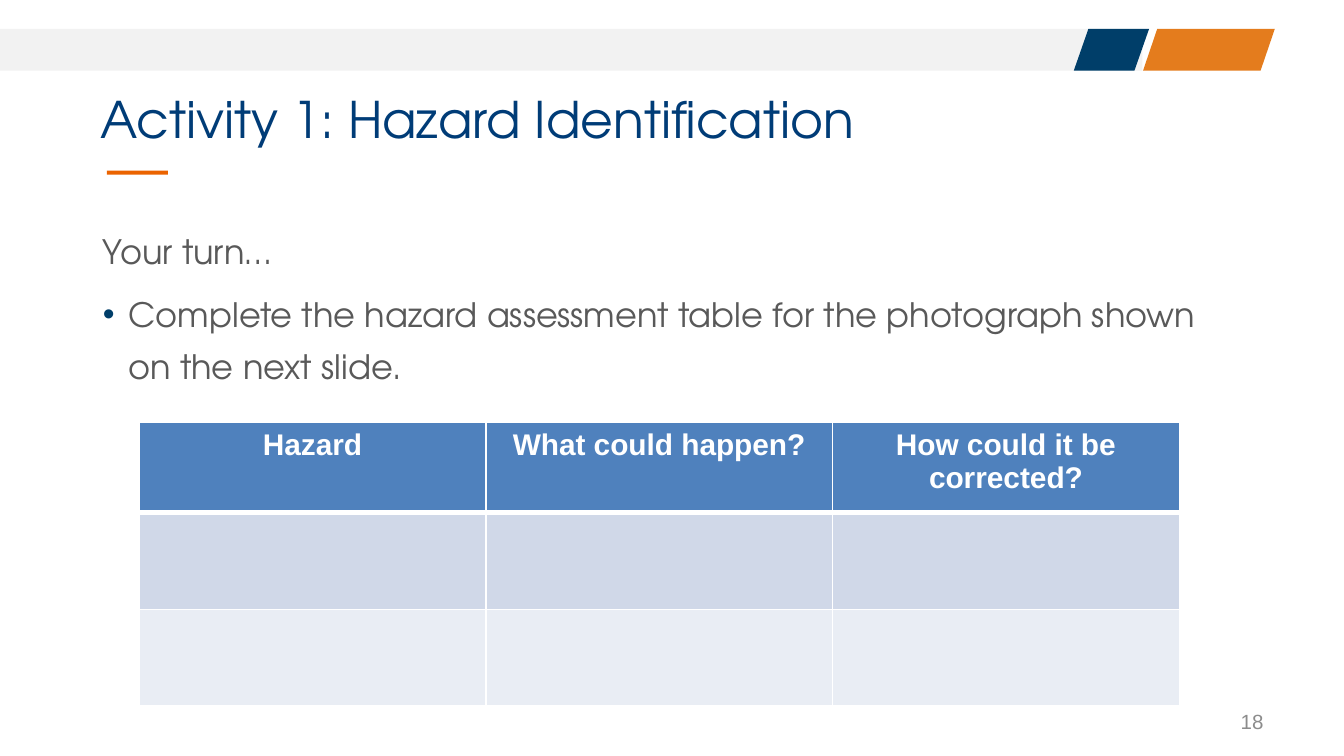
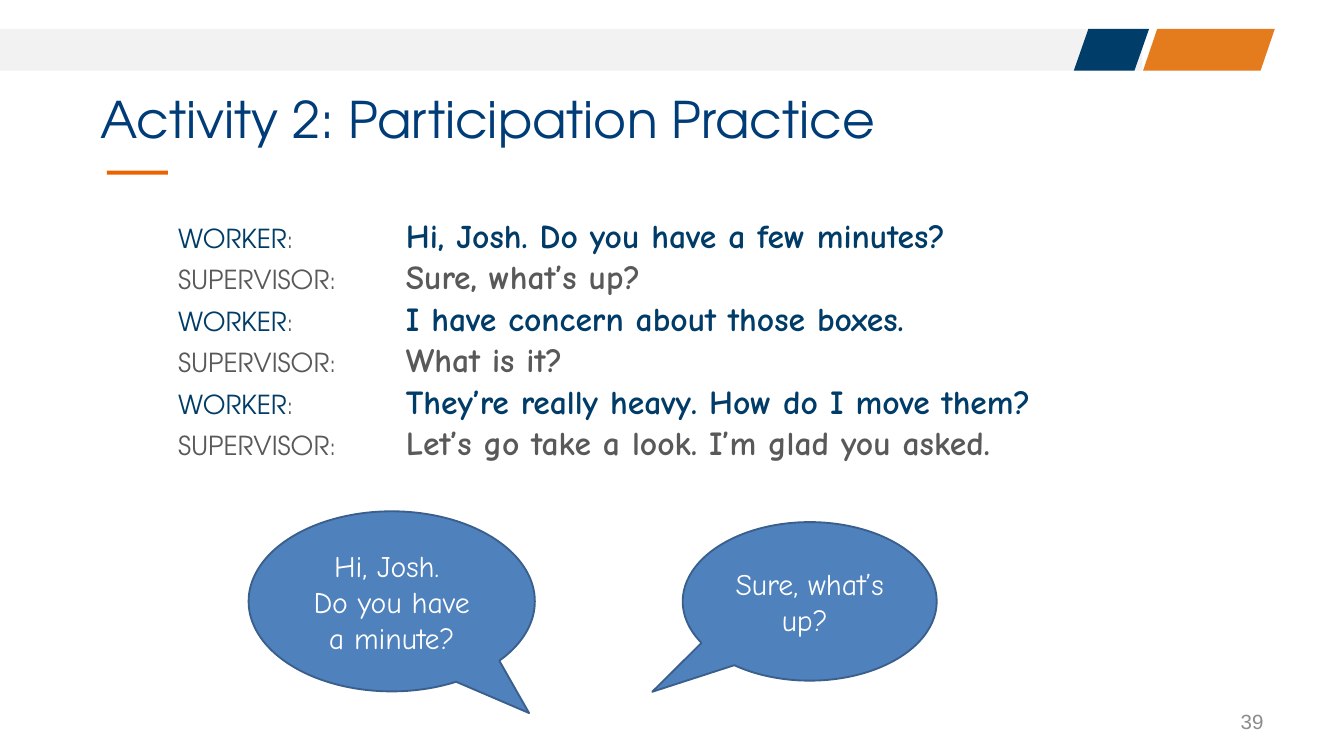
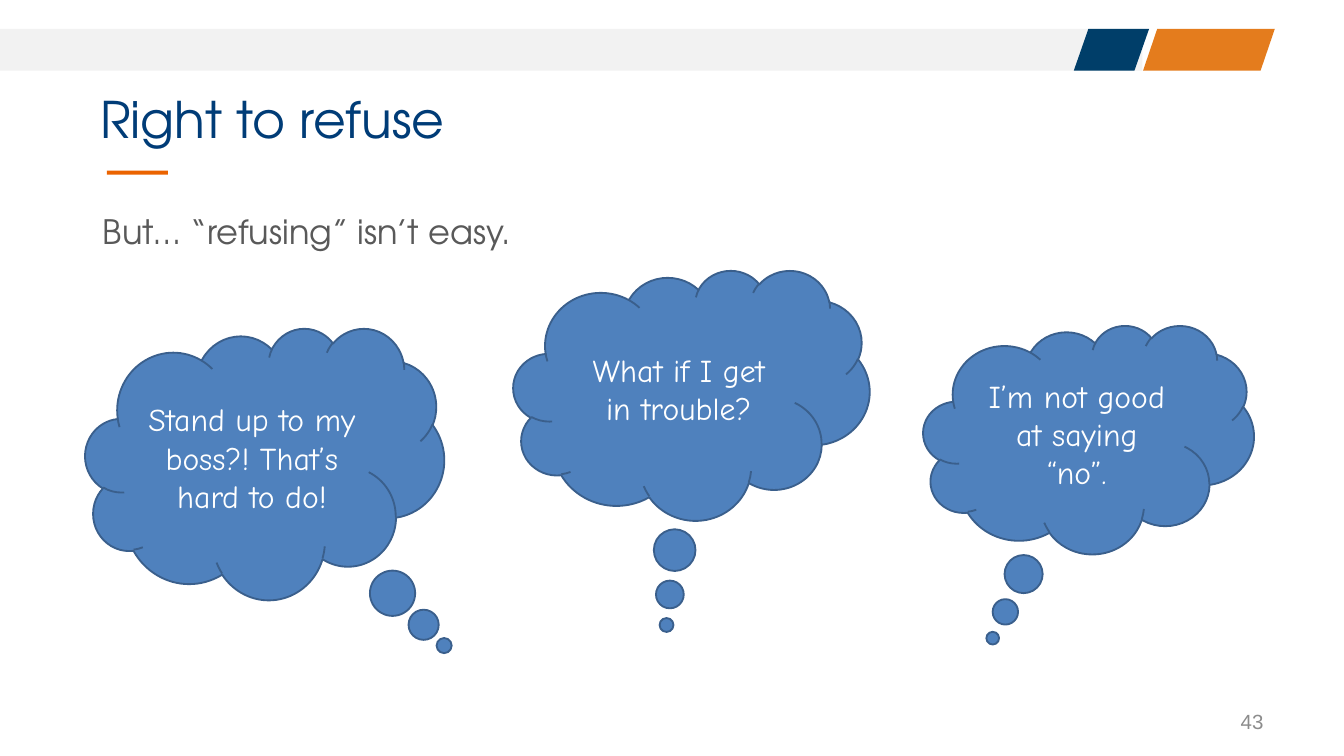
from dataclasses import dataclass

from lxml.etree import SubElement
from pptx import Presentation
from pptx.dml.color import RGBColor
from pptx.enum.shapes import MSO_SHAPE
from pptx.enum.text import MSO_ANCHOR, MSO_AUTO_SIZE, PP_ALIGN
from pptx.oxml.ns import qn
from pptx.shapes.autoshape import Shape
from pptx.slide import Slide
from pptx.table import _Cell
from pptx.text.text import Font, TextFrame, _Paragraph
from pptx.util import Pt

EMU_PER_PX = 4572

NAVY = "003E69"
DARK_NAVY = "003C67"
TITLE_BLUE = "003C77"
ORANGE = "E47C1D"
ACCENT_ORANGE = "EB6300"
BAND_GREY = "F2F2F2"
TEXT_GREY = "595959"
NUMBER_GREY = "8C8C8C"
BLUE = "4F81BD"
OUTLINE_BLUE = "3A5F8C"
WHITE = "FFFFFF"
ROW_FILLS = ("D0D8E8", "E9EDF4")

HEADING_FONT = "TeX Gyre Adventor"
SPEECH_FONT = "Comic Neue"
PLAIN_FONT = "Arial"


@dataclass(frozen=True)
class Box:
    left: int
    top: int
    width: int
    height: int

    def emu(self) -> tuple[int, int, int, int]:
        return px(self.left), px(self.top), px(self.width), px(self.height)


@dataclass(frozen=True)
class Decoration:
    kind: MSO_SHAPE
    box: Box
    fill: str
    adjustments: tuple[float, ...] = ()


@dataclass(frozen=True)
class Bubble:
    kind: MSO_SHAPE
    box: Box
    tail: tuple[float, float]
    size: int
    lines: tuple[str, ...]


@dataclass(frozen=True)
class Speaker:
    name: str
    color: str
    gap: str


DECORATIONS = (
    Decoration(MSO_SHAPE.ROUNDED_RECTANGLE, Box(0, 43, 1700, 62), BAND_GREY, (0,)),
    Decoration(MSO_SHAPE.PARALLELOGRAM, Box(1701, 43, 196, 62), ORANGE, (0.34,)),
    Decoration(MSO_SHAPE.PARALLELOGRAM, Box(1598, 43, 112, 62), NAVY, (0.35,)),
    Decoration(MSO_SHAPE.RECTANGLE, Box(159, 254, 91, 6), ACCENT_ORANGE),
)

WORKER = Speaker("WORKER", DARK_NAVY, " \t\t")
SUPERVISOR = Speaker("SUPERVISOR", TEXT_GREY, " \t")
DIALOGUE = (
    (WORKER, "Hi, Josh. Do you have a few minutes?"),
    (SUPERVISOR, "Sure, what’s up?"),
    (WORKER, "I have concern about those boxes."),
    (SUPERVISOR, "What is it?"),
    (WORKER, "They’re really heavy. How do I move them?"),
    (SUPERVISOR, "Let’s go take a look. I’m glad you asked."),
)
SPEECH_BUBBLES = (
    Bubble(MSO_SHAPE.OVAL_CALLOUT, Box(370, 761, 426, 268), (0.48, 0.62), 16,
           ("Hi, Josh. ", "Do you have a minute?")),
    Bubble(MSO_SHAPE.OVAL_CALLOUT, Box(1016, 777, 378, 236), (-0.62, 0.57), 16,
           ("Sure, what’s up? ",)),
)
THOUGHT_BUBBLES = (
    Bubble(MSO_SHAPE.CLOUD_CALLOUT, Box(127, 488, 534, 404), (0.5, 0.67), 17,
           ("Stand up to my boss?! That’s hard to do!",)),
    Bubble(MSO_SHAPE.CLOUD_CALLOUT, Box(764, 402, 530, 372), (-0.07, 0.92), 17,
           ("What if I get in trouble?",)),
    Bubble(MSO_SHAPE.CLOUD_CALLOUT, Box(1374, 484, 492, 340), (-0.29, 0.87), 17,
           ("I’m not good at saying “no”.",)),
)
TABLE_HEADINGS = ("Hazard", "What could happen?", "How could it be corrected?")
TABLE_ROW_HEIGHTS = (135, 144, 144)


def px(length: int) -> int:
    return length * EMU_PER_PX


def rgb(color: str) -> RGBColor:
    return RGBColor.from_string(color)


def style_font(font: Font, name: str, size: int, color: str, bold: bool = False) -> None:
    font.name = name
    font.size = Pt(size)
    font.bold = bold
    font.color.rgb = rgb(color)


def set_insets(frame: TextFrame) -> None:
    frame.margin_left = frame.margin_right = px(15)
    frame.margin_top = frame.margin_bottom = px(8)


def add_filled_shape(slide: Slide, kind: MSO_SHAPE, box: Box, fill: str,
                     adjustments: tuple[float, ...] = ()) -> Shape:
    shape = slide.shapes.add_shape(kind, *box.emu())
    shape.shadow.inherit = False
    shape.fill.solid()
    shape.fill.fore_color.rgb = rgb(fill)
    shape.line.fill.background()
    for index, value in enumerate(adjustments):
        shape.adjustments[index] = value
    return shape


def add_bubble(slide: Slide, bubble: Bubble) -> None:
    shape = add_filled_shape(slide, bubble.kind, bubble.box, BLUE, bubble.tail)
    shape.line.color.rgb = rgb(OUTLINE_BLUE)
    shape.line.width = Pt(1)
    frame = shape.text_frame
    frame.word_wrap = True
    frame.vertical_anchor = MSO_ANCHOR.MIDDLE
    frame.text = "\n".join(bubble.lines)
    for paragraph in frame.paragraphs:
        paragraph.alignment = PP_ALIGN.CENTER
        style_font(paragraph.font, SPEECH_FONT, bubble.size, WHITE)


def add_body(slide: Slide, box: Box) -> TextFrame:
    frame = slide.shapes.add_textbox(*box.emu()).text_frame
    frame.word_wrap = True
    frame.auto_size = MSO_AUTO_SIZE.SHAPE_TO_FIT_TEXT
    set_insets(frame)
    return frame


def write_statement(paragraph: _Paragraph, text: str, space_before: float = 0) -> None:
    paragraph.text = text
    paragraph.line_spacing = 1.3
    paragraph.space_before = Pt(space_before)
    style_font(paragraph.font, HEADING_FONT, 18, TEXT_GREY)


def add_bullet(paragraph: _Paragraph) -> None:
    properties = paragraph._p.get_or_add_pPr()
    properties.set("marL", str(px(38)))
    properties.set("indent", str(px(-38)))
    bullet_color = SubElement(properties, qn("a:buClr"))
    SubElement(bullet_color, qn("a:srgbClr"), val=NAVY)
    SubElement(properties, qn("a:buFont"), typeface=PLAIN_FONT)
    SubElement(properties, qn("a:buChar"), char="•")


def write_dialogue_line(paragraph: _Paragraph, speaker: Speaker, speech: str) -> None:
    properties = paragraph._p.get_or_add_pPr()
    properties.set("marL", str(px(112)))
    properties.set("indent", "0")
    properties.set("defTabSz", str(px(113)))
    paragraph.line_spacing = 0.9
    paragraph.space_before = Pt(2.8)
    for text, name, size, color, bold in (
        (speaker.name, HEADING_FONT, 14, speaker.color, False),
        (":", HEADING_FONT, 12, TEXT_GREY, False),
        (speaker.gap, HEADING_FONT, 18, TEXT_GREY, False),
        (speech, SPEECH_FONT, 18, speaker.color, True),
    ):
        run = paragraph.add_run()
        run.text = text
        style_font(run.font, name, size, color, bold)


def format_cell(cell: _Cell, fill: str, bottom_width: int) -> None:
    properties = cell._tc.get_or_add_tcPr()
    for side, width in (("L", 1), ("R", 1), ("T", 1), ("B", bottom_width)):
        border = SubElement(properties, qn(f"a:ln{side}"), w=str(Pt(width)))
        border_fill = SubElement(border, qn("a:solidFill"))
        SubElement(border_fill, qn("a:srgbClr"), val=WHITE)
    cell.fill.solid()
    cell.fill.fore_color.rgb = rgb(fill)


def add_hazard_table(slide: Slide, box: Box) -> None:
    table = slide.shapes.add_table(
        len(TABLE_ROW_HEIGHTS), len(TABLE_HEADINGS), *box.emu()).table
    table.horz_banding = False
    for row, height in zip(table.rows, TABLE_ROW_HEIGHTS):
        row.height = px(height)
    for column, heading in enumerate(TABLE_HEADINGS):
        header = table.cell(0, column)
        format_cell(header, BLUE, 3)
        header.text = heading
        paragraph = header.text_frame.paragraphs[0]
        paragraph.alignment = PP_ALIGN.CENTER
        style_font(paragraph.font, PLAIN_FONT, 16, WHITE, True)
        for row_index, fill in enumerate(ROW_FILLS, start=1):
            format_cell(table.cell(row_index, column), fill, 1)


def format_title(slide: Slide, text: str) -> None:
    title = slide.shapes.title
    title.left, title.top, title.width, title.height = Box(134, 43, 1732, 188).emu()
    frame = title.text_frame
    frame.text = text
    frame.word_wrap = True
    frame.auto_size = MSO_AUTO_SIZE.NONE
    frame.vertical_anchor = MSO_ANCHOR.BOTTOM
    set_insets(frame)
    paragraph = frame.paragraphs[0]
    paragraph.alignment = PP_ALIGN.LEFT
    paragraph.line_spacing = 0.9
    style_font(paragraph.font, HEADING_FONT, 27, TITLE_BLUE)


def add_page_number(slide: Slide, number: int) -> None:
    frame = slide.shapes.add_textbox(*Box(1434, 1043, 466, 60).emu()).text_frame
    frame.word_wrap = True
    frame.vertical_anchor = MSO_ANCHOR.MIDDLE
    frame.text = str(number)
    paragraph = frame.paragraphs[0]
    paragraph.alignment = PP_ALIGN.RIGHT
    style_font(paragraph.font, PLAIN_FONT, 11, NUMBER_GREY)


def add_base_slide(presentation: Presentation, title: str, number: int) -> Slide:
    slide = presentation.slides.add_slide(presentation.slide_layouts[5])
    for decoration in DECORATIONS:
        add_filled_shape(slide, decoration.kind, decoration.box,
                         decoration.fill, decoration.adjustments)
    format_title(slide, title)
    add_page_number(slide, number)
    return slide


def build_hazard_slide(presentation: Presentation) -> None:
    slide = add_base_slide(presentation, "Activity 1: Hazard Identification", 18)
    frame = add_body(slide, Box(138, 318, 1726, 406))
    write_statement(frame.paragraphs[0], "Your turn…")
    task = frame.add_paragraph()
    add_bullet(task)
    write_statement(
        task,
        "Complete the hazard assessment table for the photograph shown on the next slide.",
        5.6)
    task.space_after = Pt(18)
    add_hazard_table(slide, Box(207, 628, 1548, sum(TABLE_ROW_HEIGHTS)))


def build_participation_slide(presentation: Presentation) -> None:
    slide = add_base_slide(presentation, "Activity 2: Participation Practice", 39)
    frame = add_body(slide, Box(138, 318, 1634, 384))
    for index, (speaker, speech) in enumerate(DIALOGUE):
        paragraph = frame.add_paragraph() if index else frame.paragraphs[0]
        write_dialogue_line(paragraph, speaker, speech)
    for bubble in SPEECH_BUBBLES:
        add_bubble(slide, bubble)


def build_refusal_slide(presentation: Presentation) -> None:
    slide = add_base_slide(presentation, "Right to refuse", 43)
    frame = add_body(slide, Box(138, 288, 862, 86))
    write_statement(frame.paragraphs[0], "But… “refusing” isn’t easy.", 6)
    for bubble in THOUGHT_BUBBLES:
        add_bubble(slide, bubble)


def main() -> None:
    presentation = Presentation()
    presentation.slide_width = px(2000)
    presentation.slide_height = px(1125)
    build_hazard_slide(presentation)
    build_participation_slide(presentation)
    build_refusal_slide(presentation)
    presentation.save("out.pptx")


if __name__ == "__main__":
    main()
